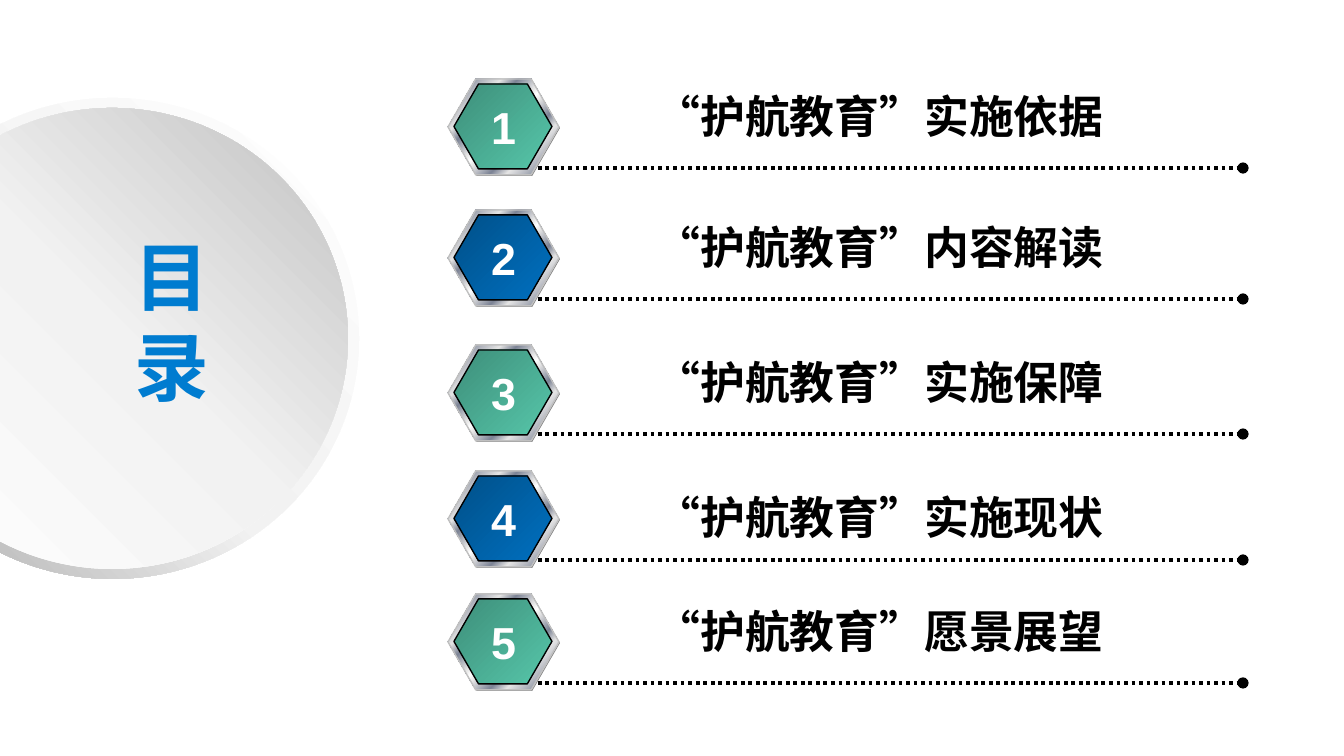
import pptx
import pptx.util
import pptx.dml.color
import pptx.enum.dml
import pptx.enum.shapes
import pptx.enum.text
import pptx.oxml
import pptx.oxml.ns
from lxml import etree

RGB = pptx.dml.color.RGBColor
WHITE = RGB(0xFF, 0xFF, 0xFF)
BLACK = RGB(0x00, 0x00, 0x00)
BLUE = RGB(0x00, 0x7C, 0xD0)
GRAY = RGB(0x80, 0x80, 0x80)
SILVER = RGB(0xC0, 0xC0, 0xC0)
PALE = RGB(0xF2, 0xF2, 0xF2)
RIM = RGB(0xA6, 0xA6, 0xA6)
DISC = RGB(0xBF, 0xBF, 0xBF)
LIGHT = RGB(0xE6, 0xE6, 0xE6)
STEEL = RGB(0x7D, 0x84, 0x96)
GREENS = [(0, RGB(0x3E, 0x8E, 0x7A)), (100, RGB(0x56, 0xC7, 0xAA))]
BLUES = [(0, RGB(0x00, 0x50, 0x89)), (100, RGB(0x00, 0x70, 0xC0))]
METAL = [(0, LIGHT), (8, STEEL), (26, LIGHT), (34, STEEL), (46, LIGHT), (50, WHITE),
         (54, LIGHT), (66, STEEL), (74, LIGHT), (92, STEEL), (100, LIGHT)]
CJK = "Noto Sans CJK SC"
PX = 914400 / 134.4
SHAPE = pptx.enum.shapes.MSO_SHAPE
qn = pptx.oxml.ns.qn

prs = pptx.Presentation()
prs.slide_width = round(1344 * PX)
prs.slide_height = round(756 * PX)
s = prs.slides.add_slide(prs.slide_layouts[5])


def add_shape(kind, x, y, w, h, stops, angle=45, line=None, adj=None):
    sp = s.shapes.add_shape(kind, *[round(v * PX) for v in (x, y, w, h)])
    sp.shadow.inherit = False
    if adj is not None:
        sp.adjustments[0] = adj
    if len(stops) == 1:
        sp.fill.solid()
        sp.fill.fore_color.rgb = stops[0][1]
    else:
        sp.fill.gradient()
        grad = sp.element.spPr.find(qn("a:gradFill"))
        gs_lst = grad.find(qn("a:gsLst"))
        for gs in list(gs_lst):
            gs_lst.remove(gs)
        for pos, color in stops:
            gs = etree.SubElement(gs_lst, qn("a:gs"), pos=str(pos * 1000))
            etree.SubElement(gs, qn("a:srgbClr"), val=str(color))
        lin = grad.find(qn("a:lin"))
        lin.set("ang", str(angle * 60000))
        lin.set("scaled", "0")
    if line is None:
        sp.line.fill.background()
    else:
        sp.line.color.rgb = line
        sp.line.width = pptx.util.Pt(0.75)


def add_text(text, x, y, w, h, size=24, color=BLACK, font="Arial", wrap=True, inset=None, sp=None):
    box = [round(v * PX) for v in (x, y, w, h)]
    if sp is None:
        sp = s.shapes.add_textbox(*box)
    else:
        sp.left, sp.top, sp.width, sp.height = box
    tf = sp.text_frame
    tf.word_wrap = wrap
    tf.auto_size = pptx.enum.text.MSO_AUTO_SIZE.NONE
    tf.vertical_anchor = pptx.enum.text.MSO_ANCHOR.TOP
    if inset is not None:
        tf.margin_left = tf.margin_top = tf.margin_right = tf.margin_bottom = inset
    tf.text = text
    for p in tf.paragraphs:
        p.alignment = pptx.enum.text.PP_ALIGN.CENTER
        r = p.runs[0]
        r.font.size = pptx.util.Pt(size)
        r.font.bold = True
        r.font.name = font
        r.font.color.rgb = color
        etree.SubElement(r.font._element, qn("a:ea"), typeface=CJK)


add_shape(SHAPE.DONUT, -134, 98, 493, 481, [(0, WHITE), (55, PALE), (100, RIM)], angle=135, adj=0.049)
add_shape(SHAPE.OVAL, -124, 108, 472, 461, [(0, WHITE), (51, PALE), (100, DISC)], angle=315)
s.shapes.element.append(s.shapes.title.element)
add_text("目\n录", 86, 231, 172, 181, size=40, color=BLUE, font=CJK, inset=0, sp=s.shapes.title)

rows = [
    (79, "“护航教育”实施依据", 3),
    (210, "“护航教育”内容解读", 3),
    (345, "“护航教育”实施保障", 3),
    (471, "“护航教育”实施现状", 12),
    (594, "“护航教育”愿景展望", 3),
]
for i, (y, label, dy) in enumerate(rows):
    add_shape(SHAPE.HEXAGON, 449, y + 1, 111, 96, [(0, GRAY)], adj=0.289)
    add_shape(SHAPE.HEXAGON, 448, y, 111, 96, METAL, line=SILVER, adj=0.289)
    add_shape(SHAPE.HEXAGON, 454, y + 5, 98, 85, BLUES if i % 2 else GREENS, line=BLACK, adj=0.289)
    ends = [round(v * PX) for v in (538, y + 89, 1243, y + 89)]
    cx = s.shapes.add_connector(pptx.enum.shapes.MSO_CONNECTOR.STRAIGHT, *ends)
    cx.line.color.rgb = BLACK
    cx.line.width = pptx.util.Pt(2)
    cx.line.dash_style = pptx.enum.dml.MSO_LINE.ROUND_DOT
    etree.SubElement(cx.line._get_or_add_ln(), qn("a:tailEnd"), type="oval")
    etree.SubElement(cx.element.spPr, qn("a:effectLst"))
    add_text(label, 616, y + dy, 527, 69)
    add_text(str(i + 1), 476, y + 14, 55, 69, color=WHITE, wrap=False)

prs.save("out.pptx")
